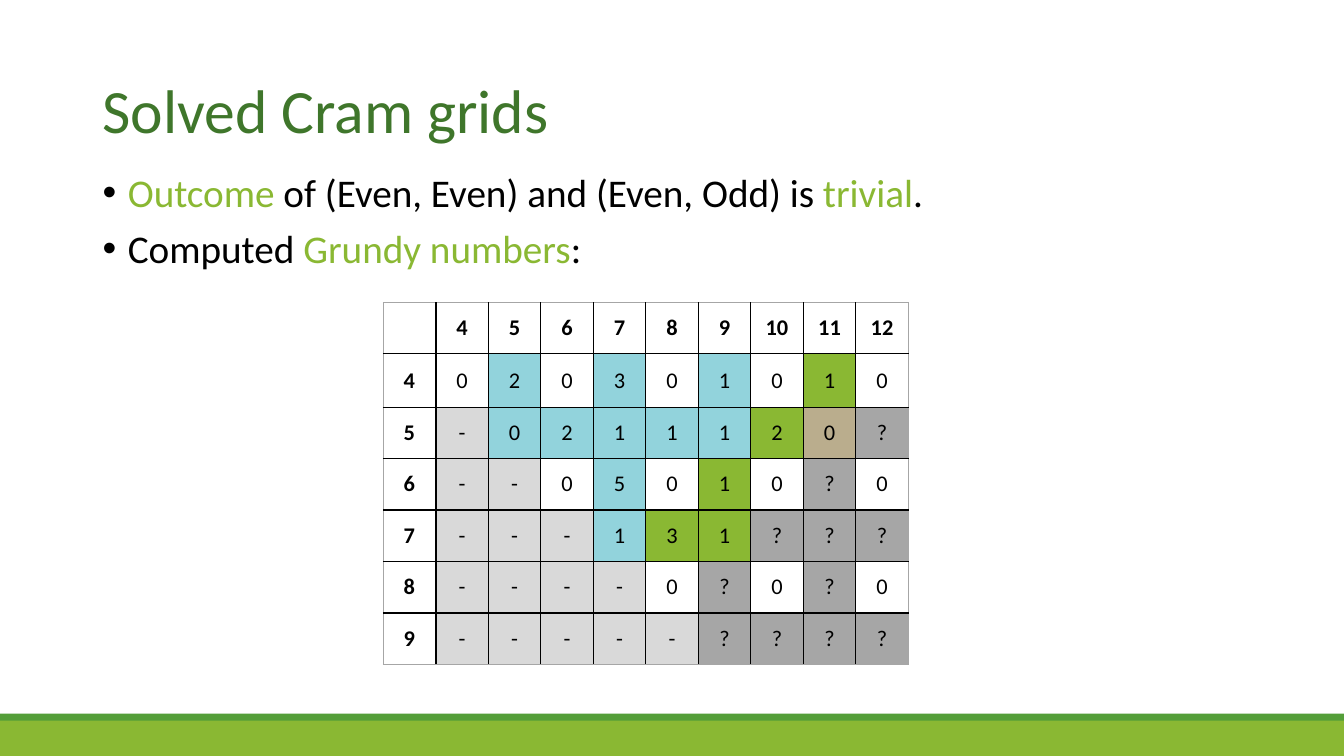
from lxml.etree import SubElement
from pptx import Presentation
from pptx.dml.color import RGBColor
from pptx.enum.shapes import MSO_SHAPE
from pptx.enum.text import MSO_ANCHOR, PP_ALIGN
from pptx.oxml.ns import qn
from pptx.util import Inches, Pt

BLACK = RGBColor(0x00, 0x00, 0x00)
WHITE = RGBColor(0xFF, 0xFF, 0xFF)
LIME = RGBColor(0x8A, 0xB8, 0x33)
GREEN = RGBColor(0x54, 0x9E, 0x39)
FOREST = RGBColor(0x3F, 0x76, 0x2B)
BLUE = RGBColor(0x92, 0xD3, 0xDC)
TAN = RGBColor(0xBA, 0xAD, 0x8D)
PALE = RGBColor(0xD9, 0xD9, 0xD9)
GREY = RGBColor(0xA6, 0xA6, 0xA6)
TINTS = {"w": WHITE, "b": BLUE, "g": LIME, "t": TAN, "p": PALE, "d": GREY}
FONT = "Calibri"

deck = Presentation()
deck.slide_width = Inches(13.33)
deck.slide_height = Inches(7.5)
slide = deck.slides.add_slide(deck.slide_layouts[6])


def style(run, size, color, bold=False):
    run.font.name = FONT
    run.font.size = Pt(size)
    run.font.color.rgb = color
    run.font.bold = bold


def border(cell, side, width, color):
    line = SubElement(cell._tc.get_or_add_tcPr(), qn("a:" + side), w=str(Pt(width)))
    fill = SubElement(line, qn("a:solidFill"))
    SubElement(fill, qn("a:srgbClr"), val=str(color))


for top, height, color in [(7.13, 0.37, LIME), (7.08, 0.07, GREEN)]:
    band = slide.shapes.add_shape(
        MSO_SHAPE.RECTANGLE, 0, Inches(top), deck.slide_width, Inches(height))
    band.shadow.inherit = False
    band.fill.solid()
    band.fill.fore_color.rgb = color
    band.line.fill.background()

title = slide.shapes.add_textbox(Inches(0.92), Inches(0.4), Inches(11.5), Inches(1.45))
frame = title.text_frame
frame.word_wrap = True
frame.vertical_anchor = MSO_ANCHOR.MIDDLE
frame.text = "Solved Cram grids"
frame.paragraphs[0].line_spacing = 0.9
style(frame.paragraphs[0].runs[0], 44, FOREST)

points = [
    [("Outcome", LIME), (" of (Even, Even) and (Even, Odd) is ", BLACK),
     ("trivial", LIME), (".", BLACK)],
    [("Computed ", BLACK), ("Grundy numbers", LIME), (":", BLACK)],
]
body = slide.shapes.add_textbox(Inches(0.92), Inches(1.67), Inches(11.5), Inches(4.76))
frame = body.text_frame
frame.word_wrap = True
for i, parts in enumerate(points):
    para = frame.add_paragraph() if i else frame.paragraphs[0]
    para.line_spacing = 0.9
    para.space_before = Pt(10)
    props = para._p.get_or_add_pPr()
    props.set("marL", str(Inches(0.25)))
    props.set("indent", str(-Inches(0.25)))
    tone = SubElement(props, qn("a:buClr"))
    SubElement(tone, qn("a:srgbClr"), val=str(BLACK))
    SubElement(props, qn("a:buFont"), typeface="Arial")
    SubElement(props, qn("a:buChar"), char="•")
    for text, color in parts:
        run = para.add_run()
        run.text = text
        style(run, 28, color)

values = [
    ["", "4", "5", "6", "7", "8", "9", "10", "11", "12"],
    list("4020301010"),
    list("5-0211120?"),
    list("6--05010?0"),
    list("7---131???"),
    list("8----0?0?0"),
    list("9-----????"),
]
fills = [
    "wwwwwwwwww",
    "wwbwbwbwgw",
    "wpbbbbbgtd",
    "wppwbwgwdw",
    "wpppbggddd",
    "wppppwdwdw",
    "wpppppdddd",
]
rows, cols = len(values), len(values[0])
grid = slide.shapes.add_table(
    rows, cols, Inches(3.8), Inches(3), Inches(5.21), Inches(3.6)).table
grid.first_row = False
grid.horz_banding = False
for r, row in enumerate(grid.rows):
    row.height = Inches(0.53 if r == 1 else 0.51)
    for c, cell in enumerate(row.cells):
        edges = {
            "lnL": (c == 0, c == 1),
            "lnR": (c == cols - 1, c == 0),
            "lnT": (r == 0, r == rows - 1),
            "lnB": (r == rows - 1, r == rows - 2),
        }
        for side, (outer, thick) in edges.items():
            if outer:
                border(cell, side, 0.5, GREY)
            else:
                border(cell, side, 1.5 if thick else 1, BLACK)
        cell.fill.solid()
        cell.fill.fore_color.rgb = TINTS[fills[r][c]]
        cell.vertical_anchor = MSO_ANCHOR.MIDDLE
        cell.margin_left = cell.margin_right = Inches(0.09)
        cell.margin_top = cell.margin_bottom = Inches(0.04)
        cell.text_frame.text = values[r][c]
        para = cell.text_frame.paragraphs[0]
        para.alignment = PP_ALIGN.CENTER
        for run in para.runs:
            style(run, 16, BLACK, r == 0 or c == 0)

deck.save("out.pptx")
